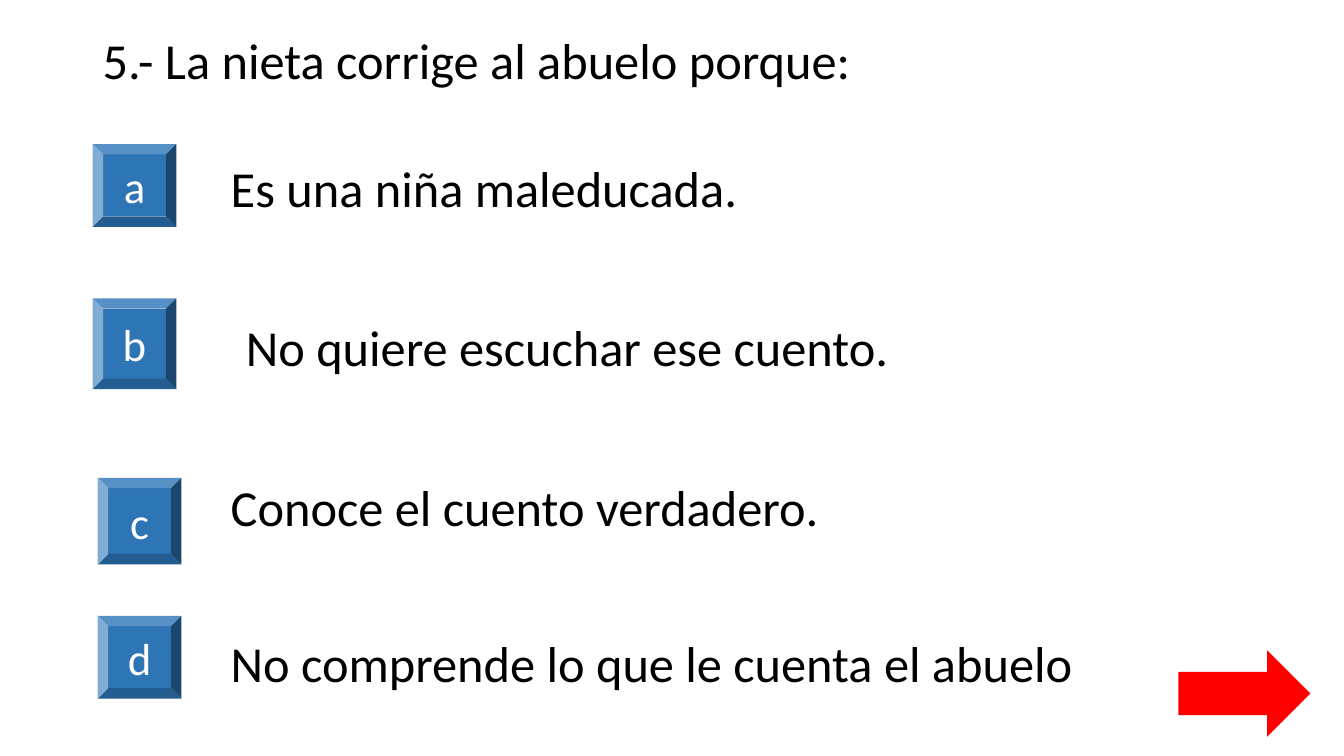
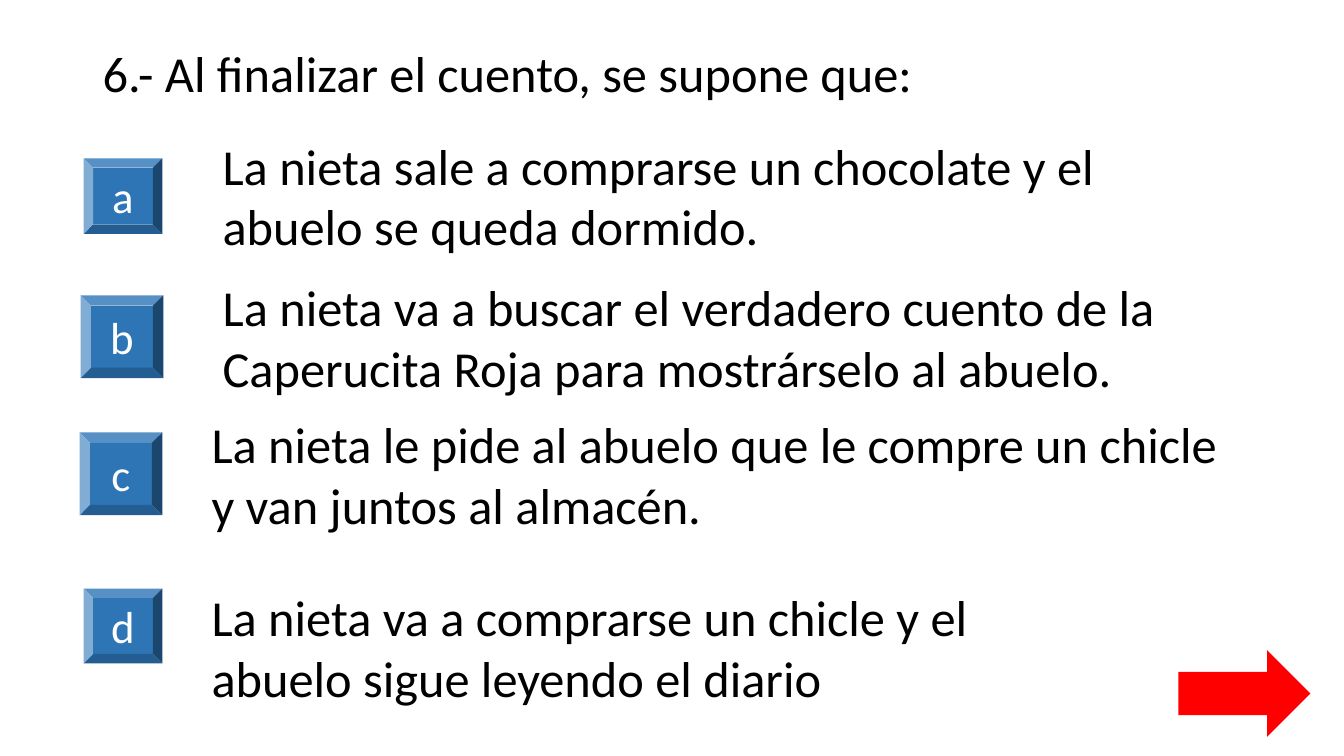
from pptx import Presentation
from pptx.dml.color import RGBColor as Rgb
from pptx.enum.shapes import MSO_SHAPE as Form
from pptx.enum.text import MSO_ANCHOR as Anchor, MSO_AUTO_SIZE as Fit, PP_ALIGN as Align
from pptx.util import Inches, Pt

CELL = Inches(0.1)
COLS, ROWS = 133.33, 75
COLORS = {"ink": "000000", "key": "2E75B6", "light": "FFFFFF", "next": "FF0000"}
FONTS = {
    "body": {"name": "Calibri", "size": Pt(36)},
    "key": {"name": "Calibri", "size": Pt(32)},
}
FRAMES = {
    "title": {"word_wrap": True, "vertical_anchor": Anchor.MIDDLE},
    "answer": {"word_wrap": True, "auto_size": Fit.SHAPE_TO_FIT_TEXT},
    "key": {"word_wrap": True, "vertical_anchor": Anchor.MIDDLE},
}
PARAS = {"title": {"line_spacing": 0.9}, "answer": {}, "key": {"alignment": Align.CENTER}}
LINES = {1: 7.1, 2: 13.1}  # box height in rows, by lines of text


def color(name):
    return Rgb.from_string(COLORS[name])


def apply(target, values):
    for name, value in values.items():
        setattr(target, name, value)


class Deck:
    """Holds the style and the current slide; lengths are grid columns and rows."""

    def __init__(self):
        self.show = Presentation()
        apply(self.show, {"slide_width": int(COLS * CELL), "slide_height": ROWS * CELL})
        self.slide = None

    def start(self):
        self.slide = self.show.slides.add_slide(self.show.slide_layouts[6])

    def place(self, *box):
        return [int(side * CELL) for side in box]

    def label(self, shape, text, role, font, ink):
        frame = shape.text_frame
        apply(frame, FRAMES[role])
        para = frame.paragraphs[0]
        apply(para, PARAS[role])
        run = para.add_run()
        run.text = text
        apply(run.font, FONTS[font])
        run.font.color.rgb = color(ink)

    def text(self, text, role, *box):
        shape = self.slide.shapes.add_textbox(*self.place(*box))
        self.label(shape, text, role, "body", "ink")

    def title(self, text, height):
        self.text(text, "title", 9.2, 4, 115, height)

    def answer(self, text, left, top, width, lines):
        self.text(text, "answer", left, top, width, LINES[lines])

    def solid(self, form, fill, *box):
        shape = self.slide.shapes.add_shape(form, *self.place(*box))
        shape.shadow.inherit = False
        shape.fill.solid()
        shape.fill.fore_color.rgb = color(fill)
        shape.line.fill.background()
        return shape

    def key(self, letter, *box):
        shape = self.solid(Form.BEVEL, "key", *box)
        self.label(shape, letter, "key", "key", "light")

    def arrow(self):
        self.solid(Form.RIGHT_ARROW, "next", 116.9, 64.5, 13.1, 8.6)

    def quiz(self, title, height, lines, items):
        """Builds one question; each item is a key box, an answer and its left, top, width."""
        self.start()
        self.title(title, height)
        for letter, (box, text, spot) in zip("abcd", items):
            self.key(letter, *box)
            self.answer(text, *spot, lines)
        self.arrow()


QUIZ = [
    ("5.- La nieta corrige al abuelo porque:", 4.6, 1, [
        ((9.2, 14.3, 8.3, 8.2), "Es una niña maleducada.", (21.9, 15.1, 77.3)),
        ((9.2, 29.6, 8.3, 9), "No quiere escuchar ese cuento.", (23.4, 30.9, 93.5)),
        ((9.7, 47.4, 8.3, 8.6), "Conoce el cuento verdadero.", (21.9, 46.7, 87.8)),
        ((9.7, 61.1, 8.3, 8.2), "No comprende lo que le cuenta el abuelo",
         (21.9, 62.2, 93.6)),
    ]),
    ("6.- Al finalizar el cuento, se supone que:", 7.2, 2, [
        ((8.3, 15.7, 7.8, 7.5),
         "La nieta sale a comprarse un chocolate y el abuelo se queda dormido.",
         (21.1, 12.9, 102.4)),
        ((8, 29.3, 8.2, 8.2),
         "La nieta va a buscar el verdadero cuento de la Caperucita Roja "
         "para mostrárselo al abuelo.",
         (21.1, 26.9, 95.8)),
        ((7.9, 42.9, 8.2, 8.2),
         "La nieta le pide al abuelo que le compre un chicle y van juntos al almacén.",
         (20, 40.5, 104.5)),
        ((8.3, 58.4, 7.8, 7.4),
         "La nieta va a comprarse un chicle y el abuelo sigue leyendo el diario",
         (20, 57.7, 90.2)),
    ]),
]


def main():
    deck = Deck()
    for page in QUIZ:
        deck.quiz(*page)
    deck.show.save("out.pptx")


if __name__ == "__main__":
    main()
